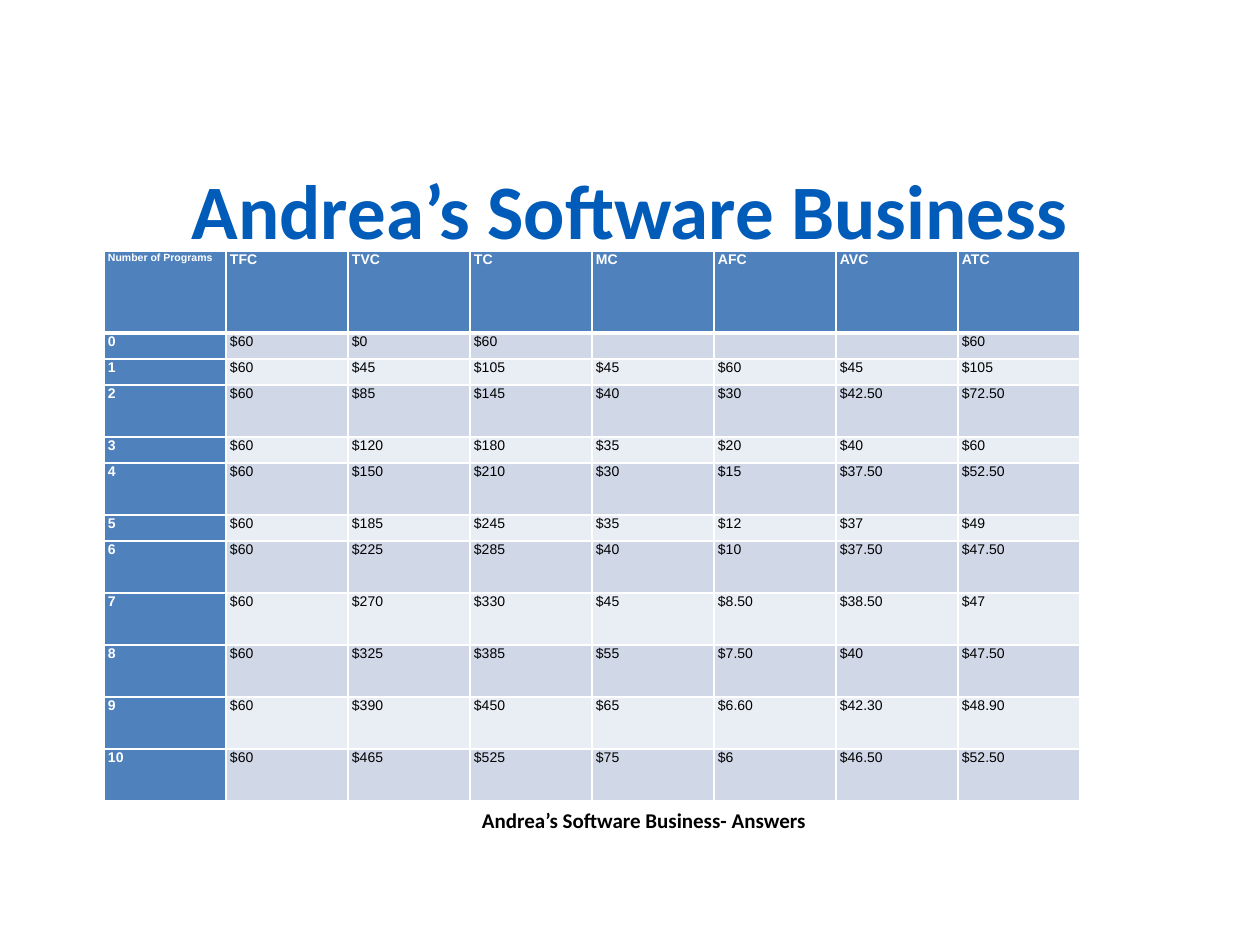
"""Build the cost table slide for Andrea's Software Business."""
import dataclasses

import lxml.etree
import pptx
import pptx.dml.color
import pptx.enum.text
import pptx.oxml.ns
import pptx.util

EMU_PER_PX = 914400 / 126
COLUMN_PX = 122
HEADER_PX, SHORT_ROW_PX, TALL_ROW_PX = 82, 26, 52

HEADERS = ["Number of Programs", "TFC", "TVC", "TC", "MC", "AFC", "AVC", "ATC"]
COSTS = [
    ["0", "$60", "$0", "$60", "", "", "", "$60"],
    ["1", "$60", "$45", "$105", "$45", "$60", "$45", "$105"],
    ["2", "$60", "$85", "$145", "$40", "$30", "$42.50", "$72.50"],
    ["3", "$60", "$120", "$180", "$35", "$20", "$40", "$60"],
    ["4", "$60", "$150", "$210", "$30", "$15", "$37.50", "$52.50"],
    ["5", "$60", "$185", "$245", "$35", "$12", "$37", "$49"],
    ["6", "$60", "$225", "$285", "$40", "$10", "$37.50", "$47.50"],
    ["7", "$60", "$270", "$330", "$45", "$8.50", "$38.50", "$47"],
    ["8", "$60", "$325", "$385", "$55", "$7.50", "$40", "$47.50"],
    ["9", "$60", "$390", "$450", "$65", "$6.60", "$42.30", "$48.90"],
    ["10", "$60", "$465", "$525", "$75", "$6", "$46.50", "$52.50"],
]


@dataclasses.dataclass(frozen=True)
class Theme:
    title_font: str = "Calibri"
    table_font: str = "Arial"
    title: str = "005CB8"
    text: str = "000000"
    light: str = "FFFFFF"
    accent: str = "4F81BD"
    bands: tuple = ("D0D8E8", "E9EDF4")
    title_size: int = 44
    caption_size: int = 12
    cell_size: int = 8
    label_size: int = 6


THEME = Theme()


def px(n):
    return pptx.util.Emu(round(n * EMU_PER_PX))


def rgb(color):
    return pptx.dml.color.RGBColor.from_string(color)


def place(sp, left, top, width, height):
    sp.left, sp.top, sp.width, sp.height = map(px, (left, top, width, height))


def style_runs(p, font, size, color, bold):
    for r in p.runs:
        r.font.name = font
        r.font.size = pptx.util.Pt(size)
        r.font.bold = bold
        r.font.color.rgb = rgb(color)


def set_title(slide, text):
    sp = slide.shapes.title
    place(sp, 63, 126, 1134, 158)
    tf = sp.text_frame
    tf.text = text
    tf.auto_size = pptx.enum.text.MSO_AUTO_SIZE.NONE
    tf.vertical_anchor = pptx.enum.text.MSO_ANCHOR.MIDDLE
    p = tf.paragraphs[0]
    p.alignment = pptx.enum.text.PP_ALIGN.CENTER
    p.line_spacing = pptx.util.Pt(57)
    style_runs(p, THEME.title_font, THEME.title_size, THEME.title, True)


def set_borders(cell, widths):
    tc_pr = cell._tc.get_or_add_tcPr()
    for side, width in zip("LRTB", widths):
        ln = lxml.etree.SubElement(
            tc_pr, pptx.oxml.ns.qn(f"a:ln{side}"), w=str(pptx.util.Pt(width)))
        fill = lxml.etree.SubElement(ln, pptx.oxml.ns.qn("a:solidFill"))
        lxml.etree.SubElement(fill, pptx.oxml.ns.qn("a:srgbClr"), val=THEME.light)


def set_cell(cell, text, row, col):
    is_label = row == 0 or col == 0
    cell.margin_left = cell.margin_right = px(4)
    cell.margin_top = cell.margin_bottom = 0
    set_borders(cell, (1, 1, 3 if row == 1 else 1, 3 if row == 0 else 1))
    cell.fill.solid()
    cell.fill.fore_color.rgb = rgb(THEME.accent if is_label else THEME.bands[(row - 1) % 2])
    p = cell.text_frame.paragraphs[0]
    p.line_spacing = 1.07
    if text:
        p.text = text
        size = THEME.label_size if row == col == 0 else THEME.cell_size
        color = THEME.light if is_label else THEME.text
        style_runs(p, THEME.table_font, size, color, is_label)
    else:
        lxml.etree.SubElement(
            p._p, pptx.oxml.ns.qn("a:endParaRPr"), sz=str(THEME.cell_size * 100))


def row_height(values):
    return TALL_ROW_PX if any("." in value for value in values) else SHORT_ROW_PX


def add_cost_table(slide, left, top):
    rows = [HEADERS] + COSTS
    heights = [HEADER_PX] + [row_height(values) for values in COSTS]
    table = slide.shapes.add_table(
        len(rows), len(HEADERS), px(left), px(top),
        px(COLUMN_PX * len(HEADERS)), px(sum(heights))).table
    table.first_col = True
    for column in table.columns:
        column.width = px(COLUMN_PX)
    for row, (values, height) in enumerate(zip(rows, heights)):
        table.rows[row].height = px(height)
        for col, text in enumerate(values):
            set_cell(table.cell(row, col), text, row, col)


def add_caption(slide, text):
    sp = slide.shapes.add_textbox(px(473), px(803), px(346), px(35))
    tf = sp.text_frame
    tf.text = text
    tf.word_wrap = False
    tf.auto_size = pptx.enum.text.MSO_AUTO_SIZE.SHAPE_TO_FIT_TEXT
    tf.vertical_anchor = pptx.enum.text.MSO_ANCHOR.MIDDLE
    tf.margin_left = tf.margin_right = px(9)
    tf.margin_top = tf.margin_bottom = px(5)
    style_runs(tf.paragraphs[0], THEME.title_font, THEME.caption_size, THEME.text, True)


def main():
    prs = pptx.Presentation()
    prs.slide_width, prs.slide_height = px(1260), px(945)
    slide = prs.slides.add_slide(prs.slide_layouts[5])
    set_title(slide, "Andrea’s Software Business")
    add_cost_table(slide, 104, 251)
    add_caption(slide, "Andrea’s Software Business- Answers")
    prs.save("out.pptx")


if __name__ == "__main__":
    main()
